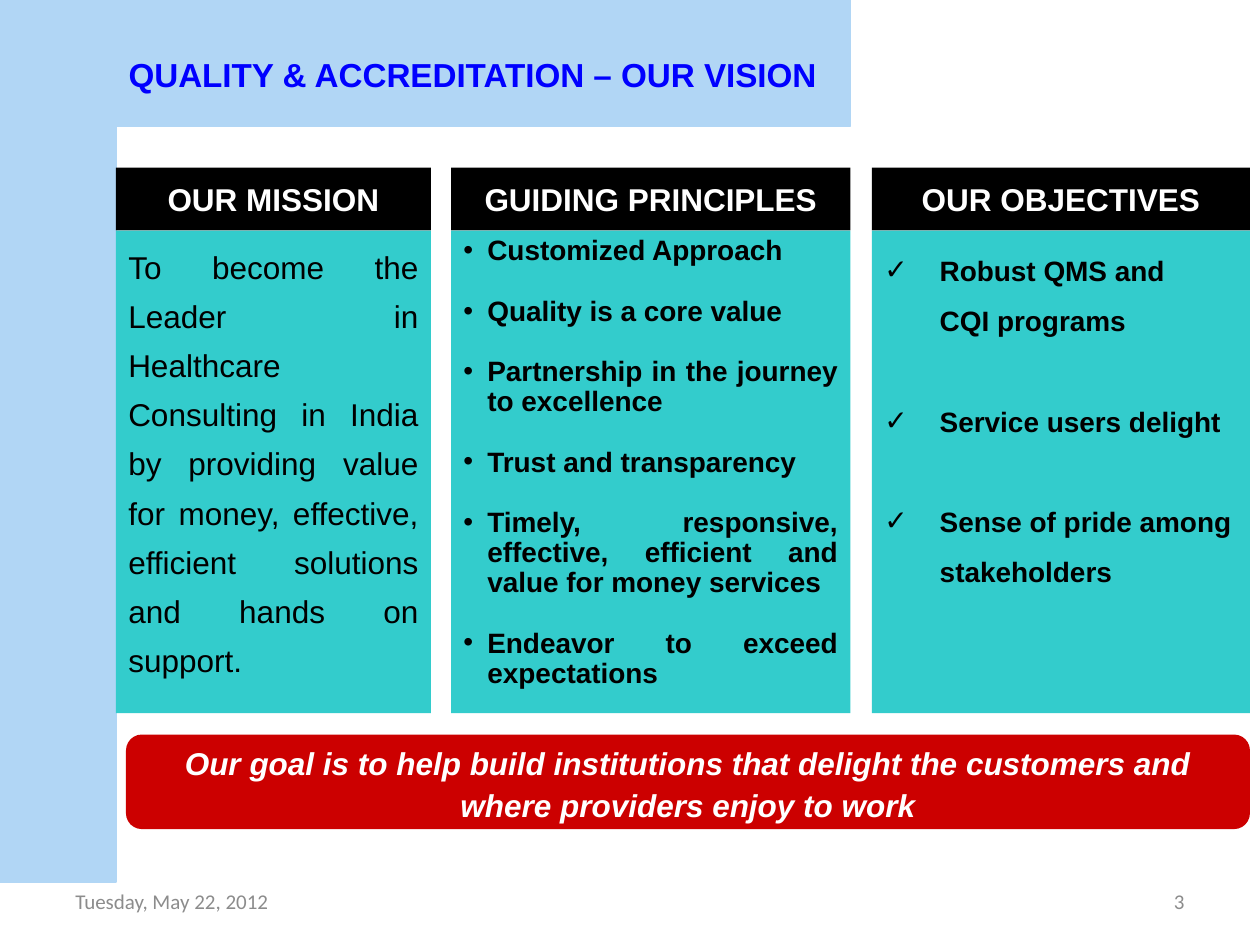
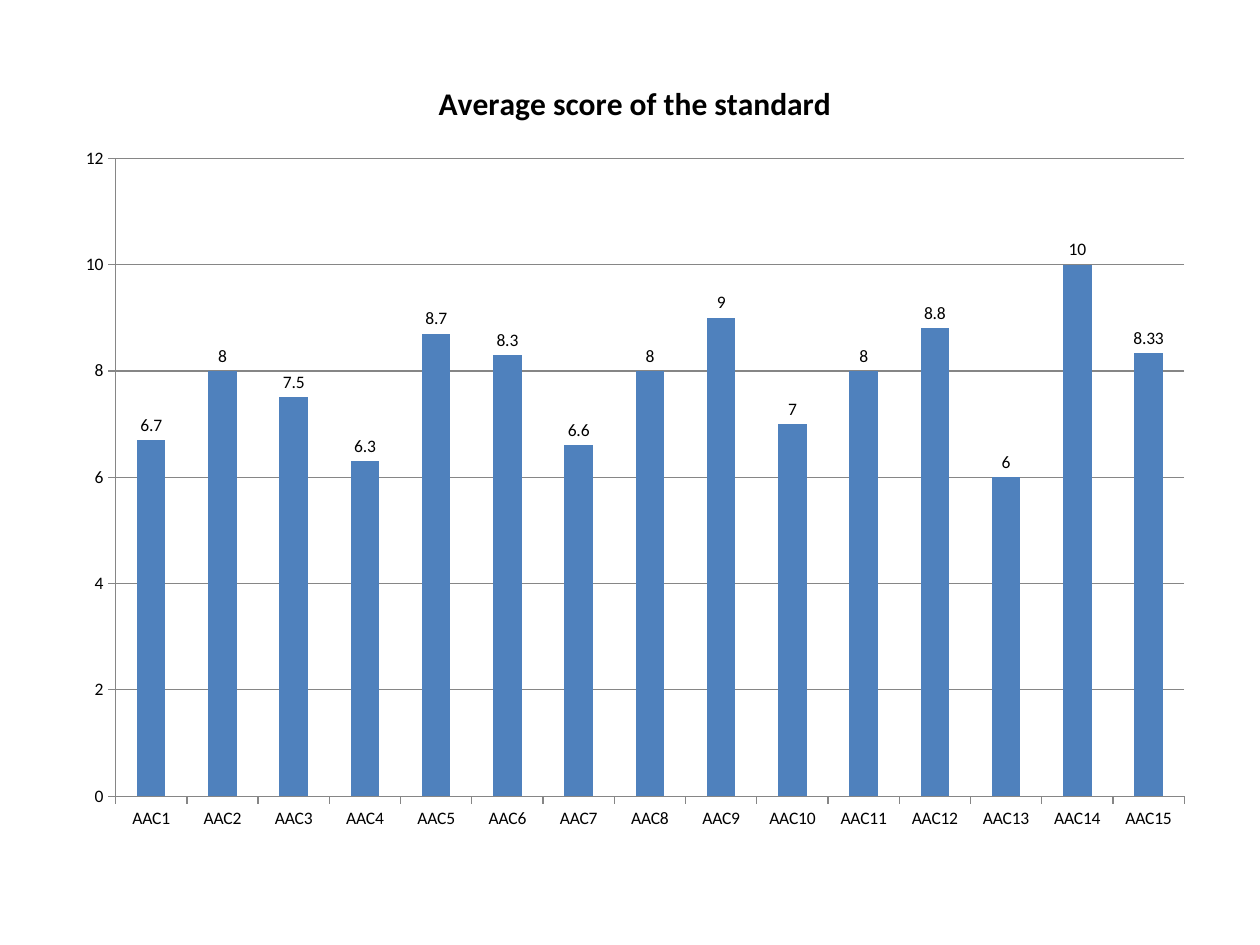
from lxml import etree
from pptx import Presentation
from pptx.chart.data import CategoryChartData
from pptx.dml.color import RGBColor
from pptx.enum.chart import XL_CHART_TYPE, XL_LABEL_POSITION, XL_TICK_MARK
from pptx.enum.shapes import MSO_SHAPE
from pptx.enum.text import MSO_ANCHOR, PP_ALIGN
from pptx.oxml.ns import qn
from pptx.util import Inches, Pt

RECT, ROUNDED = MSO_SHAPE.RECTANGLE, MSO_SHAPE.ROUNDED_RECTANGLE
TOP, MIDDLE = MSO_ANCHOR.TOP, MSO_ANCHOR.MIDDLE
LEFT, CENTER, RIGHT = PP_ALIGN.LEFT, PP_ALIGN.CENTER, PP_ALIGN.RIGHT
JUSTIFY = PP_ALIGN.JUSTIFY
COLUMNS = XL_CHART_TYPE.COLUMN_CLUSTERED
OUTSIDE_END = XL_LABEL_POSITION.OUTSIDE_END
TICK_OUTSIDE = XL_TICK_MARK.OUTSIDE

COLORS = {name: RGBColor.from_string(value) for name, value in {
    "band": "B1D6F5", "title": "0000FF", "black": "000000", "white": "FFFFFF",
    "panel": "33CCCC", "goal": "CC0000", "footer": "8C8C8C",
    "bar": "4F81BD", "axis": "868686",
}.items()}


def write(shape, *paragraphs, size=18, color="black", font="Arial", bold=False,
          italic=False, align=LEFT, anchor=TOP, line_spacing=1.0, gap=0,
          bullet=None, indent=0):
    """Fill a shape with paragraphs; gap is the space between them in points."""
    frame = shape.text_frame
    frame.word_wrap = True
    frame.vertical_anchor = anchor
    for number, text in enumerate(paragraphs):
        paragraph = frame.paragraphs[0] if number == 0 else frame.add_paragraph()
        paragraph.text = text
        paragraph.alignment = align
        paragraph.line_spacing = line_spacing
        paragraph.space_before = Pt(gap if number else 0)
        if bullet:
            properties = paragraph._p.get_or_add_pPr()
            properties.set("marL", str(Inches(indent)))
            properties.set("indent", str(-Inches(indent)))
            etree.SubElement(properties, qn("a:buFont")).set("typeface", "Arial")
            etree.SubElement(properties, qn("a:buChar")).set("char", bullet)
        for run in paragraph.runs:
            run.font.name = font
            run.font.size = Pt(size)
            run.font.bold = bold
            run.font.italic = italic
            run.font.color.rgb = COLORS[color]


def add_block(slide, left, top, width, height, fill, kind=RECT):
    block = slide.shapes.add_shape(
        kind, Inches(left), Inches(top), Inches(width), Inches(height))
    block.shadow.inherit = False
    block.fill.solid()
    block.fill.fore_color.rgb = COLORS[fill]
    block.line.fill.background()
    return block


prs = Presentation()
prs.slide_width, prs.slide_height = Inches(10), Inches(7.5)
title_only, blank = prs.slide_layouts[5], prs.slide_layouts[6]

# Slide 1: vision
vision = prs.slides.add_slide(title_only)
title = vision.shapes.title
title.left, title.top = Inches(0.92), Inches(0)
title.width, title.height = Inches(5.83), Inches(1)
title.text_frame.margin_top = Inches(0.43)
title.fill.solid()
title.fill.fore_color.rgb = COLORS["band"]
write(title, "QUALITY & ACCREDITATION – OUR VISION", size=19, color="title", bold=True)

side_band = add_block(vision, 0, 0, 0.92, 7, "band")
for band in (title, side_band):
    band.line.color.rgb = COLORS["band"]
    band.line.width = Pt(0.75)

mission = ["To become the Leader in Healthcare Consulting in India by providing value "
           "for money, effective, efficient solutions and hands on support."]
principles = [
    "Customized Approach",
    "Quality is a core value",
    "Partnership in the journey to excellence",
    "Trust and transparency",
    "Timely, responsive, effective, efficient and value for money services",
    "Endeavor to exceed expectations",
]
objectives = [
    "Robust QMS and\vCQI programs",
    "Service users delight",
    "Sense of pride among stakeholders",
]
pillars = [
    (0.92, 2.5, "OUR MISSION", mission, dict(align=JUSTIFY, line_spacing=1.3)),
    (3.58, 3.17, "GUIDING PRINCIPLES", principles,
     dict(size=16, bold=True, align=JUSTIFY, line_spacing=0.9, gap=17.2,
          bullet="•", indent=0.19)),
    (6.92, 3, "OUR OBJECTIVES", objectives,
     dict(size=16, bold=True, line_spacing=1.5, gap=28.5, bullet="✓", indent=0.44)),
]
for left, width, heading, body, body_format in pillars:
    header = add_block(vision, left, 1.33, width, 0.5, "black")
    write(header, heading, color="white", bold=True, align=CENTER, anchor=MIDDLE)
    panel = add_block(vision, left, 1.83, width, 3.83, "panel")
    write(panel, *body, **body_format)

goal = add_block(vision, 1, 5.83, 8.92, 0.75, "goal", ROUNDED)
write(goal, "Our goal is to help build institutions that delight the customers and "
      "where providers enjoy to work", color="white", bold=True, italic=True,
      align=CENTER, anchor=MIDDLE, line_spacing=1.1)

for left, text, align in ((0.5, "Tuesday, May 22, 2012", LEFT), (7.17, "3", RIGHT)):
    footer = vision.shapes.add_textbox(
        Inches(left), Inches(6.95), Inches(2.33), Inches(0.4))
    write(footer, text, size=12, font="Calibri", color="footer", align=align,
          anchor=MIDDLE)

# Slide 2: scores
scores = [6.7, 8, 7.5, 6.3, 8.7, 8.3, 6.6, 8, 9, 7, 8, 8.8, 6, 10, 8.33]
chart_title = "Average score of the standard"
score_data = CategoryChartData()
score_data.categories = [f"AAC{number}" for number in range(1, len(scores) + 1)]
score_data.add_series(chart_title, scores)

score_slide = prs.slides.add_slide(blank)
chart = score_slide.shapes.add_chart(
    COLUMNS, Inches(0.5), Inches(0.42), Inches(9.08), Inches(6.28), score_data).chart
chart.has_legend = False
chart.font.name = "Calibri"
chart.font.size = Pt(10)
chart.font.color.rgb = COLORS["black"]
chart.has_title = True
write(chart.chart_title, chart_title, font="Calibri", bold=True, align=CENTER)

for axis in (chart.category_axis, chart.value_axis):
    axis.major_tick_mark = TICK_OUTSIDE
    axis.format.line.color.rgb = COLORS["axis"]
value_axis = chart.value_axis
value_axis.minimum_scale, value_axis.maximum_scale = 0, 12
value_axis.major_unit = 2
value_axis.has_major_gridlines = True
value_axis.major_gridlines.format.line.color.rgb = COLORS["axis"]

plot = chart.plots[0]
plot.vary_by_categories = False
plot.gap_width = 150
bars = plot.series[0].format.fill
bars.solid()
bars.fore_color.rgb = COLORS["bar"]
plot.has_data_labels = True
plot.data_labels.show_value = True
plot.data_labels.position = OUTSIDE_END

prs.save("out.pptx")
